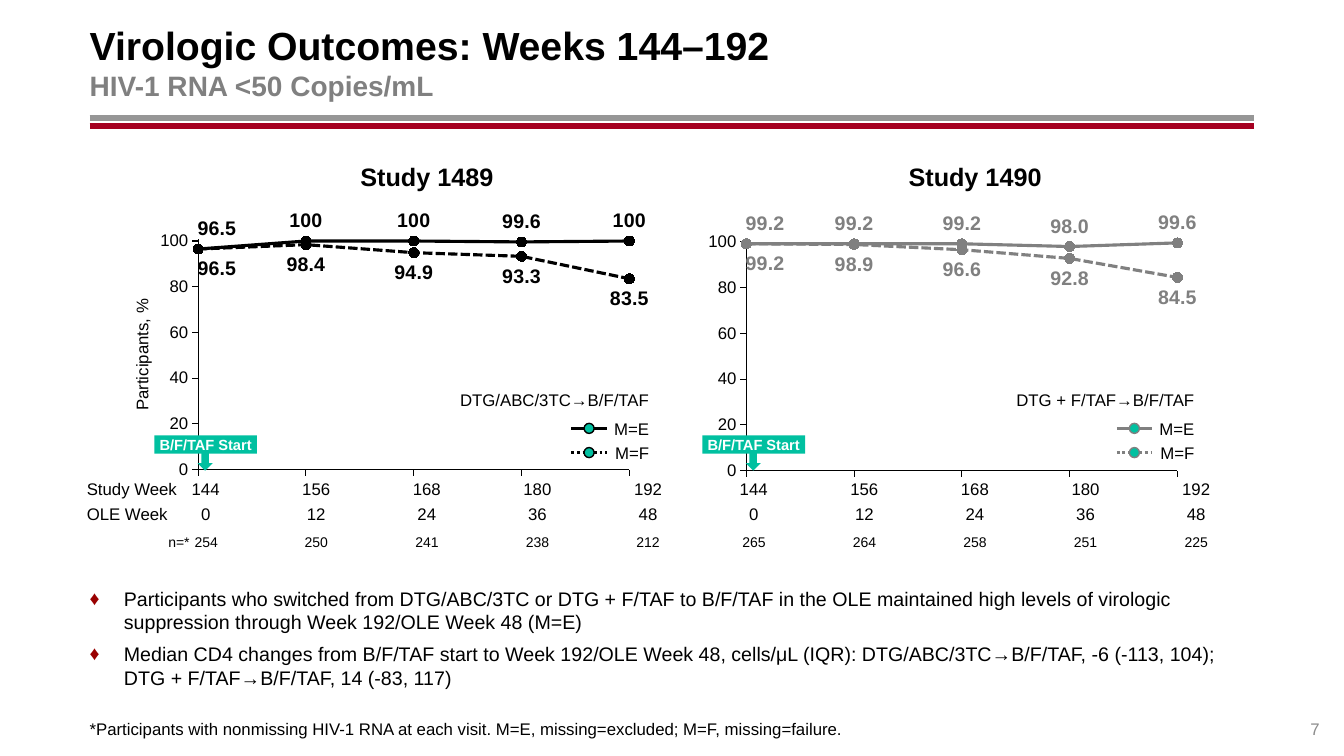
from dataclasses import dataclass

from lxml import etree
from pptx import Presentation
from pptx.chart.data import XyChartData
from pptx.dml.color import RGBColor
from pptx.enum.chart import (XL_CHART_TYPE, XL_LABEL_POSITION, XL_MARKER_STYLE,
                             XL_TICK_LABEL_POSITION, XL_TICK_MARK)
from pptx.enum.dml import MSO_LINE
from pptx.enum.shapes import MSO_CONNECTOR, MSO_SHAPE
from pptx.enum.text import MSO_ANCHOR, MSO_AUTO_SIZE, PP_ALIGN
from pptx.oxml.ns import qn
from pptx.util import Pt

LEFT, MID, RIGHT = PP_ALIGN.LEFT, PP_ALIGN.CENTER, PP_ALIGN.RIGHT
TOP, CENTER, BOTTOM = MSO_ANCHOR.TOP, MSO_ANCHOR.MIDDLE, MSO_ANCHOR.BOTTOM
ABOVE, BELOW = XL_LABEL_POSITION.ABOVE, XL_LABEL_POSITION.BELOW
DASH, DOT = MSO_LINE.SQUARE_DOT, MSO_LINE.ROUND_DOT
NONE, OUT = XL_TICK_MARK.NONE, XL_TICK_MARK.OUTSIDE


@dataclass(frozen=True)
class Theme:
    font: str = "Arial"
    black: str = "000000"
    white: str = "FFFFFF"
    gray: str = "808080"
    rule: str = "969696"
    red: str = "A50021"
    bullet: str = "990000"
    teal: str = "00C0A0"
    page: str = "8C8C8C"
    title: float = 28
    sub: float = 20
    head: float = 18
    body: float = 14
    small: float = 12
    tag: float = 10.5
    count: float = 10


T = Theme()
WEEKS = (0, 12, 24, 36, 48)
START = 144
STEP = 79  # distance between visits
PANELS = (
    dict(name="Study 1489", dx=0, key="DTG/ABC/3TC→B/F/TAF", color=T.black,
         top=135.4, shift=0, form="General",
         kept=(96.5, 100, 100, 99.6, 100), failed=(96.5, 98.4, 94.9, 93.3, 83.5),
         counts=("n=*", "254", "250", "241", "238", "212"),
         left=77, cols=(62, 47.5) + (STEP,) * 4),
    dict(name="Study 1490", dx=391.5, key="DTG + F/TAF→B/F/TAF", color=T.gray,
         top=136.1, shift=-2, form="0.0",
         kept=(99.2, 99.2, 99.2, 98.0, 99.6), failed=(99.2, 98.9, 96.6, 92.8, 84.5),
         counts=("265", "264", "258", "251", "225"),
         left=499, cols=(STEP,) * 5),
)
POINTS = (
    "Participants who switched from DTG/ABC/3TC or DTG + F/TAF to B/F/TAF in the OLE "
    "maintained high levels of virologic suppression through Week 192/OLE Week 48 (M=E)",
    "Median CD4 changes from B/F/TAF start to Week 192/OLE Week 48, cells/μL (IQR): "
    "DTG/ABC/3TC→B/F/TAF, -6 (-113, 104); DTG + F/TAF→B/F/TAF, 14 (-83, 117)",
)
NOTE = ("*Participants with nonmissing HIV-1 RNA at each visit. "
        "M=E, missing=excluded; M=F, missing=failure.")


def rgb(color):
    return RGBColor.from_string(color)


def style(font, size, color=T.black, bold=False):
    font.name, font.size, font.bold = T.font, Pt(size), bold
    font.color.rgb = rgb(color)


def frame(shape, anchor, pad=(0, 0, 0, 0), wrap=True):
    box = shape.text_frame
    box.auto_size, box.word_wrap, box.vertical_anchor = MSO_AUTO_SIZE.NONE, wrap, anchor
    box.margin_left, box.margin_top, box.margin_right, box.margin_bottom = map(Pt, pad)
    return box


def place(shape, x, y, w, h):
    shape.left, shape.top, shape.width, shape.height = map(Pt, (x, y, w, h))


def write(par, text, size, color=T.black, bold=False, align=LEFT):
    par.text, par.alignment = text, align
    for run in par.runs:
        style(run.font, size, color, bold)


def label(shapes, text, x, y, w, h, size=T.small, color=T.black, bold=False,
          align=MID, anchor=TOP):
    box = shapes.add_textbox(*map(Pt, (x, y, w, h)))
    write(frame(box, anchor, wrap=False).paragraphs[0], text, size, color, bold, align)
    return box


def line(shapes, x, y, w, color, width, dash=None):
    link = shapes.add_connector(MSO_CONNECTOR.STRAIGHT, *map(Pt, (x, y, x + w, y)))
    link.line.color.rgb, link.line.width = rgb(color), Pt(width)
    if dash:
        link.line.dash_style = dash
    etree.SubElement(link._element.spPr, qn("a:effectLst"))


def solid(shapes, kind, x, y, w, h, edge=None):
    shape = shapes.add_shape(kind, *map(Pt, (x, y, w, h)))
    shape.shadow.inherit = False
    shape.fill.solid()
    shape.fill.fore_color.rgb = rgb(T.teal)
    if edge:
        shape.line.color.rgb, shape.line.width = rgb(edge), Pt(1)
    else:
        shape.line.fill.background()
    return shape


def bullet(par, mark=None):
    props = par._p.get_or_add_pPr()
    indent = Pt(24.5) if mark else 0
    props.set("marL", str(indent))
    props.set("indent", str(-indent))
    if mark:
        tint = etree.SubElement(props, qn("a:buClr"))
        etree.SubElement(tint, qn("a:srgbClr"), val=T.bullet)
        etree.SubElement(props, qn("a:buFont"), typeface=T.font)
        etree.SubElement(props, qn("a:buChar"), char=mark)
    else:
        etree.SubElement(props, qn("a:buNone"))


def layout(parent, at, **sizes):
    """Insert a manual chart layout at the given child index."""
    node = etree.Element(qn("c:layout"))
    manual = etree.SubElement(node, qn("c:manualLayout"))
    for tag, val in sizes.items():
        etree.SubElement(manual, qn("c:" + tag), val=str(val))
    parent.insert(at, node)


def curve(series, color, dash, pos, form):
    pen = series.format.line
    pen.color.rgb, pen.width = rgb(color), Pt(2.25)
    if dash:
        pen.dash_style = dash
    mark = series.marker
    mark.style, mark.size = XL_MARKER_STYLE.CIRCLE, 7
    mark.format.fill.solid()
    mark.format.fill.fore_color.rgb = rgb(color)
    mark.format.line.color.rgb = rgb(color)
    for i in range(len(WEEKS)):
        tag = series.points[i].data_label
        style(tag.font, T.body, color, True)
        tag.position = pos
    for i, node in enumerate(series._element.xpath("c:dLbls/c:dLbl")):
        node.insert(1, etree.Element(qn("c:numFmt"), formatCode=form, sourceLinked="0"))
        if i == 0:
            layout(node, 1, x=0.037, y=0)


def plot(shapes, panel):
    data = XyChartData()
    for name in ("kept", "failed"):
        series = data.add_series("M=E" if name == "kept" else "M=F")
        for week, val in zip(WEEKS, panel[name]):
            series.add_data_point(week, val)
    spot = map(Pt, (114.5 + panel["dx"], panel["top"], 362.2, 225.4))
    chart = shapes.add_chart(XL_CHART_TYPE.XY_SCATTER_LINES, *spot, data).chart
    chart.has_legend = chart.has_title = False
    style(chart.font, T.count)
    chart.plots[0].vary_by_categories = False
    area = chart._chartSpace.chart.plotArea
    for old in area.findall(qn("c:layout")):
        area.remove(old)
    layout(area, 0, layoutTarget="inner", xMode="edge", yMode="edge",
           x=0.073, y=0.156, w=0.852, h=0.732)
    for axis, high, unit in ((chart.category_axis, 48, 12), (chart.value_axis, 101, 20)):
        axis.minimum_scale, axis.maximum_scale, axis.major_unit = 0, high, unit
        axis.has_major_gridlines = False
        axis.major_tick_mark, axis.minor_tick_mark = OUT, NONE
        axis.format.line.color.rgb, axis.format.line.width = rgb(T.black), Pt(0.75)
        style(axis.tick_labels.font, T.small)
    chart.category_axis.tick_label_position = XL_TICK_LABEL_POSITION.NONE
    kept, failed = chart.plots[0].series
    curve(kept, panel["color"], None, ABOVE, panel["form"])
    curve(failed, panel["color"], DASH, BELOW, "0.0")


def table(shapes, panel):
    cols = panel["cols"]
    spot = map(Pt, (panel["left"], 381, sum(cols), 12))
    grid = shapes.add_table(1, len(cols), *spot).table
    grid.first_row = grid.horz_banding = False
    for i, (width, text) in enumerate(zip(cols, panel["counts"])):
        grid.columns[i].width = Pt(width)
        cell = grid.cell(0, i)
        cell.fill.background()
        cell.vertical_anchor = BOTTOM
        cell.margin_left = cell.margin_top = cell.margin_bottom = 0
        head = text == "n=*"
        cell.margin_right = Pt(3.6 if head else 0)
        first = cols[0] != STEP and i == 1
        align = RIGHT if head else LEFT if first else MID
        write(cell.text_frame.paragraphs[0], text, T.count, align=align)


def legend(shapes, panel):
    group = shapes.add_group_shape().shapes
    x = 408.2 + panel["dx"] + panel["shift"]
    label(group, panel["key"], x - 82, 278.6, 137.5, 14.4, align=RIGHT)
    for text, y, dash in (("M=E", 306, None), ("M=F", 323.3, DOT)):
        label(group, text, x + 30, y - 7.2, 25.5, 14.4, align=RIGHT)
        line(group, x, y, 25.2, panel["color"], 2, dash)
        solid(group, MSO_SHAPE.OVAL, x + 9, y - 3.6, 7.2, 7.2, panel["color"])


def study(shapes, panel):
    dx = panel["dx"]
    plot(shapes, panel)
    label(shapes, panel["name"], 257 + dx, 116.6, 96, 19.4, T.head, bold=True, anchor=CENTER)
    for i, week in enumerate(WEEKS):
        for val, y in ((START + week, 342), (week, 360)):
            label(shapes, str(val), 136.9 + dx + i * STEP, y, 20, 14.4)
    solid(shapes, MSO_SHAPE.DOWN_ARROW, 141.1 + dx, 320.4, 10.8, 15.8)
    tag = solid(shapes, MSO_SHAPE.RECTANGLE, 110.2 + dx, 311, 73.4, 13)
    write(frame(tag, CENTER).paragraphs[0], "B/F/TAF Start", T.tag, T.white, True, MID)
    table(shapes, panel)
    legend(shapes, panel)


def prose(slide):
    """Fill the title, list and footnote placeholders."""
    title, body, note = slide.placeholders
    place(title, 64, 13, 831.6, 62)
    par = frame(title, CENTER, (0, 3.6, 7.2, 3.6)).paragraphs[0]
    write(par, "Virologic Outcomes: Weeks 144–192\vHIV-1 RNA <50 Copies/mL", T.title, bold=True)
    style(par.runs[1].font, T.sub, T.gray, True)
    place(body, 64, 415.5, 831.6, 83)
    box = frame(body, TOP, (0, 3.6, 7.2, 3.6))
    box.text = "\n".join(POINTS)
    for par, text in zip(box.paragraphs, POINTS):
        write(par, text, T.body)
        par.space_before = Pt(6)
        bullet(par, "♦")
    place(note, 64, 513.4, 831.6, 14.4)
    par = frame(note, BOTTOM).paragraphs[0]
    write(par, NOTE, T.small)
    par.space_before = Pt(0)
    bullet(par)


def main():
    deck = Presentation()
    deck.slide_width, deck.slide_height = Pt(960), Pt(540)
    slide = deck.slides.add_slide(deck.slide_layouts[3])
    shapes = slide.shapes
    prose(slide)
    for y, color in ((84.4, T.rule), (90.2, T.red)):
        line(shapes, 64, y, 831.6, color, 4.25)
    for panel in PANELS:
        study(shapes, panel)
    label(shapes, "Participants, %", 41.8, 246.2, 118.8, 14.4).rotation = 270
    for text, y, width in (("Study Week", 342, 65), ("OLE Week", 360, 58.5)):
        label(shapes, text, 62, y, width, 14.4, align=LEFT)
    label(shapes, "7", 895.6, 499, 47, 28.8, color=T.page, align=RIGHT, anchor=BOTTOM)
    deck.save("out.pptx")


if __name__ == "__main__":
    main()
